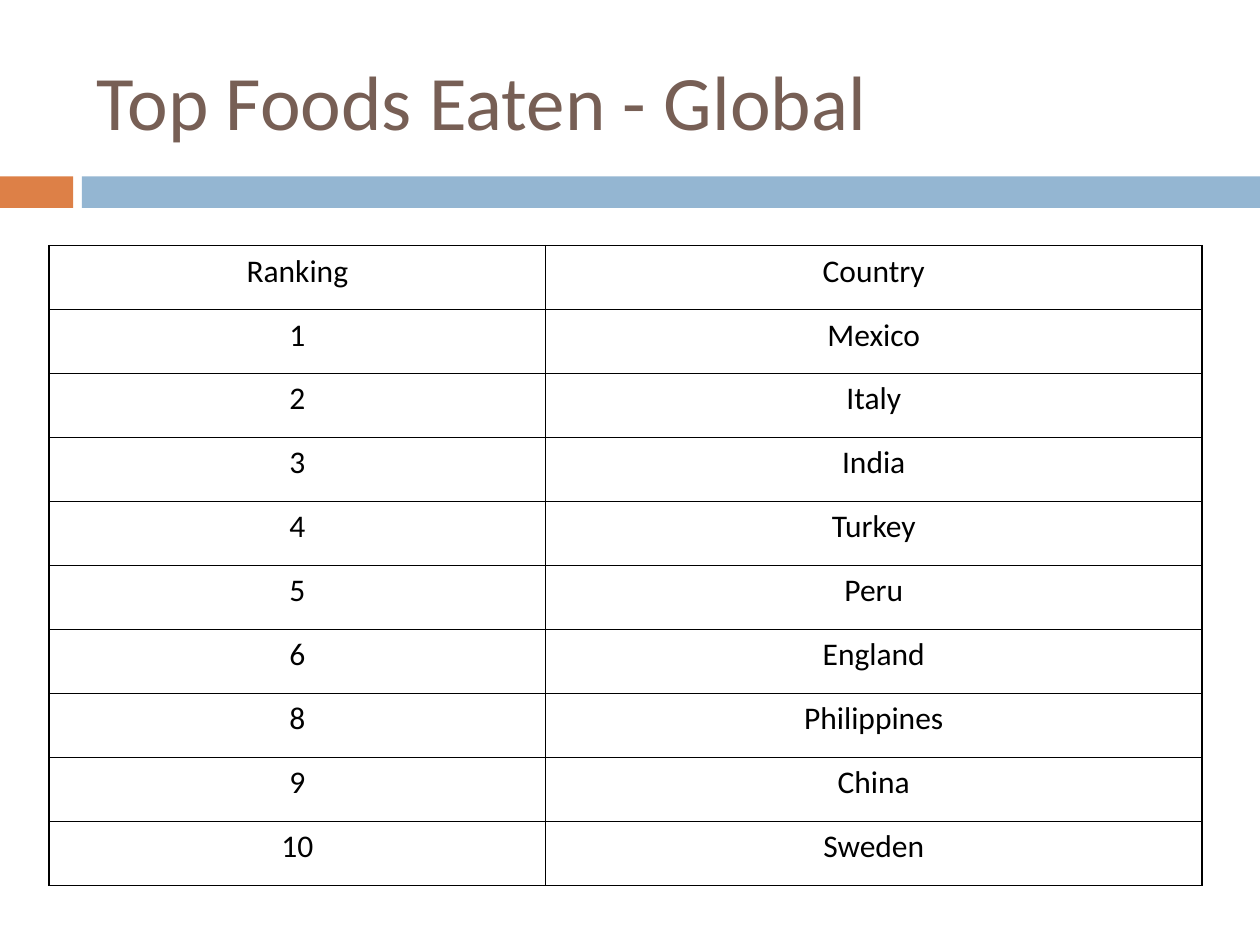
from lxml import etree
from pptx import Presentation
from pptx import util as u
from pptx.dml.color import RGBColor
from pptx.enum import shapes, text
from pptx.oxml.ns import qn

WIDE, HIGH = 10, 7.5
FONT = "Calibri"
TITLE = "Top Foods Eaten - Global"
BARS = [(0, 0.58, "DD8047"), (0.65, WIDE - 0.65, "94B6D2")]  # left, width, colour
ROWS = [
    ("Ranking", "Country"),
    ("1", "Mexico"),
    ("2", "Italy"),
    ("3", "India"),
    ("4", "Turkey"),
    ("5", "Peru"),
    ("6", "England"),
    ("8", "Philippines"),
    ("9", "China"),
    ("10", "Sweden"),
]
COLS = (3.94, 5.21)
TALL = 5.08


def box(*sides):
    return [u.Inches(side) for side in sides]


def color(code):
    return RGBColor.from_string(code)


def style(para, size, code):
    para.font.name = FONT
    para.font.size = u.Pt(size)
    para.font.color.rgb = color(code)


def border(cell, code, width):
    props = cell._tc.get_or_add_tcPr()
    for spot, side in enumerate(("L", "R", "T", "B")):
        line = etree.Element(qn("a:ln" + side), w=str(u.Pt(width)))
        fill = etree.SubElement(line, qn("a:solidFill"))
        etree.SubElement(fill, qn("a:srgbClr"), val=code)
        props.insert(spot, line)


def main():
    deck = Presentation()
    deck.slide_width, deck.slide_height = box(WIDE, HIGH)
    slide = deck.slides.add_slide(deck.slide_layouts[6])

    # Two-colour band
    for left, width, code in BARS:
        bar = slide.shapes.add_shape(
            shapes.MSO_SHAPE.RECTANGLE, *box(left, 1.4, width, 0.25))
        bar.shadow.inherit = False
        bar.fill.solid()
        bar.fill.fore_color.rgb = color(code)
        bar.line.fill.background()

    # Title
    frame = slide.shapes.add_textbox(*box(0.67, 0.25, 8.92, 1.08)).text_frame
    frame.word_wrap = True
    frame.vertical_anchor = text.MSO_ANCHOR.MIDDLE
    frame.text = TITLE
    style(frame.paragraphs[0], 44, "775F55")

    # Ranking table
    table = slide.shapes.add_table(
        len(ROWS), len(COLS), *box(0.39, 1.95, sum(COLS), TALL)).table
    table.first_row = table.horz_banding = False
    for col, width in zip(table.columns, COLS):
        col.width = u.Inches(width)
    for r, row in enumerate(ROWS):
        for c, word in enumerate(row):
            cell = table.cell(r, c)
            cell.text = word
            cell.fill.background()
            border(cell, "000000", 1)
            para = cell.text_frame.paragraphs[0]
            para.alignment = text.PP_ALIGN.CENTER
            style(para, 18, "000000")

    deck.save("out.pptx")


if __name__ == "__main__":
    main()
